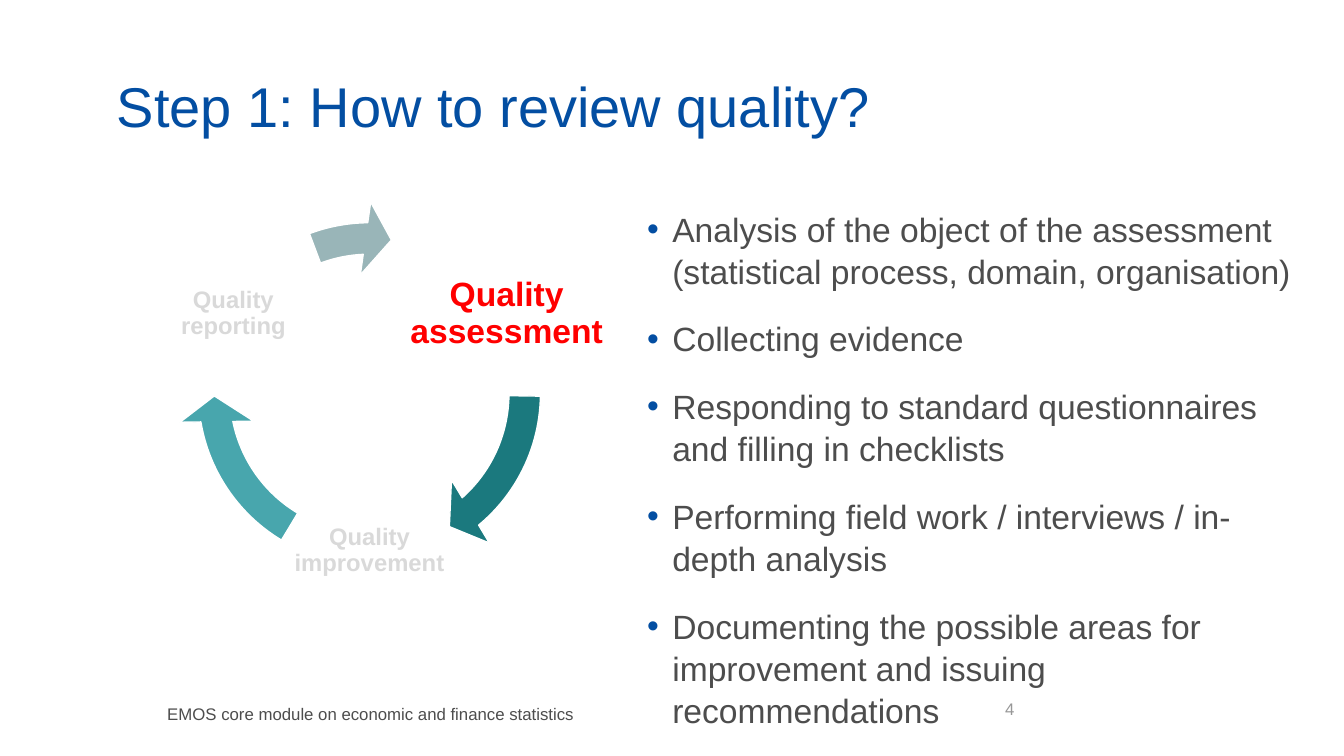
import pptx
import pptx.util
import pptx.dml.color
import pptx.enum.shapes
import pptx.enum.text
import pptx.oxml
import pptx.oxml.ns

RGB = pptx.dml.color.RGBColor
BLUE = RGB(0x03, 0x4E, 0xA2)
GREY = RGB(0x4D, 0x4D, 0x4D)
PALE = RGB(0x97, 0x97, 0x97)
FADED = RGB(0xD9, 0xD9, 0xD9)
RED = RGB(0xFF, 0x00, 0x00)
WHITE = RGB(0xFF, 0xFF, 0xFF)
TEAL = RGB(0x1B, 0x79, 0x7E)
AQUA = RGB(0x48, 0xA6, 0xAD)
MIST = RGB(0x99, 0xB5, 0xB8)

ALIGN = pptx.enum.text.PP_ALIGN
ANCHOR = pptx.enum.text.MSO_ANCHOR
SCALE = 9144

STEPS = [
    "Analysis of the object of the assessment (statistical process, domain, organisation)",
    "Collecting evidence",
    "Responding to standard questionnaires and filling in checklists",
    "Performing field work / interviews / in-depth analysis",
    "Documenting the possible areas for improvement and issuing recommendations",
]
LABELS = [
    ("Quality assessment", (389, 231, 227, 161), 24, RED),
    ("Quality improvement", (286, 466, 161, 161), 17, FADED),
    ("Quality reporting", (151, 231, 161, 161), 17, FADED),
]
ARROWS = [
    (29.654, 0.507, TEAL),
    (101.735, 72.588, AQUA),
    (161.111, 149.661, MIST),
]


def px(count):
    return pptx.util.Emu(count * SCALE)


def place(shape, box):
    shape.left, shape.top, shape.width, shape.height = map(px, box)


def bullet(para, color):
    props = para._p.get_or_add_pPr()
    props.set("marL", str(px(25)))
    props.set("indent", str(px(-25)))
    space = pptx.oxml.ns.nsdecls("a")
    for xml in (
        f'<a:buClr {space}><a:srgbClr val="{color}"/></a:buClr>',
        f'<a:buFont {space} typeface="Arial"/>',
        f'<a:buChar {space} char="•"/>',
    ):
        props.append(pptx.oxml.parse_xml(xml))


def write(shape, lines, size, color, bold=False, align=ALIGN.LEFT,
          anchor=ANCHOR.TOP, inset=(10, 5, 10, 5), pitch=None, after=0, dot=None):
    frame = shape.text_frame
    frame.word_wrap = True
    frame.auto_size = pptx.enum.text.MSO_AUTO_SIZE.NONE
    frame.vertical_anchor = anchor
    (frame.margin_left, frame.margin_top,
     frame.margin_right, frame.margin_bottom) = map(px, inset)
    frame.text = "\n".join(lines)
    for para in frame.paragraphs:
        para.alignment = align
        para.line_spacing = pitch
        para.space_after = pptx.util.Pt(after)
        if dot is not None:
            bullet(para, dot)
        font = para.font
        font.name = "Arial"
        font.size = pptx.util.Pt(size)
        font.bold = bold
        font.color.rgb = color


def text(slide, box, lines, size, color, **style):
    shape = slide.shapes.add_textbox(*map(px, box))
    write(shape, lines, size, color, **style)


def arrow(slide, end, start, color):
    kind = pptx.enum.shapes.MSO_SHAPE.CIRCULAR_ARROW
    shape = slide.shapes.add_shape(kind, *map(px, (176, 200, 381, 381)))
    shape.shadow.inherit = False
    for slot, value in enumerate((0.082, 5.758, end, start, 0.096)):
        shape.adjustments[slot] = value
    shape.fill.solid()
    shape.fill.fore_color.rgb = color
    shape.line.color.rgb = WHITE
    shape.line.width = pptx.util.Pt(1)


def main():
    deck = pptx.Presentation()
    deck.slide_width, deck.slide_height = px(1333), px(750)
    slide = deck.slides.add_slide(deck.slide_layouts[5])
    title = slide.shapes.title
    place(title, (106, 53, 1150, 86))
    write(title, ["Step 1: How to review quality?"], 40, BLUE,
          anchor=ANCHOR.BOTTOM, inset=(10, 5, 10, 0), pitch=0.9)
    text(slide, (156, 693, 608, 30),
         ["EMOS core module on economic and finance statistics"], 12, GREY)
    text(slide, (632, 200, 676, 506), STEPS, 24, GREY,
         pitch=1.05, after=18, dot=BLUE)
    text(slide, (987, 683, 300, 40), ["4"], 12, PALE, anchor=ANCHOR.MIDDLE)
    for label, box, size, color in LABELS:
        text(slide, box, [label], size, color, bold=True, align=ALIGN.CENTER,
             anchor=ANCHOR.MIDDLE, inset=(2, 2, 2, 2), pitch=0.9)
    for end, start, color in ARROWS:
        arrow(slide, end, start, color)
    deck.save("out.pptx")


if __name__ == "__main__":
    main()
